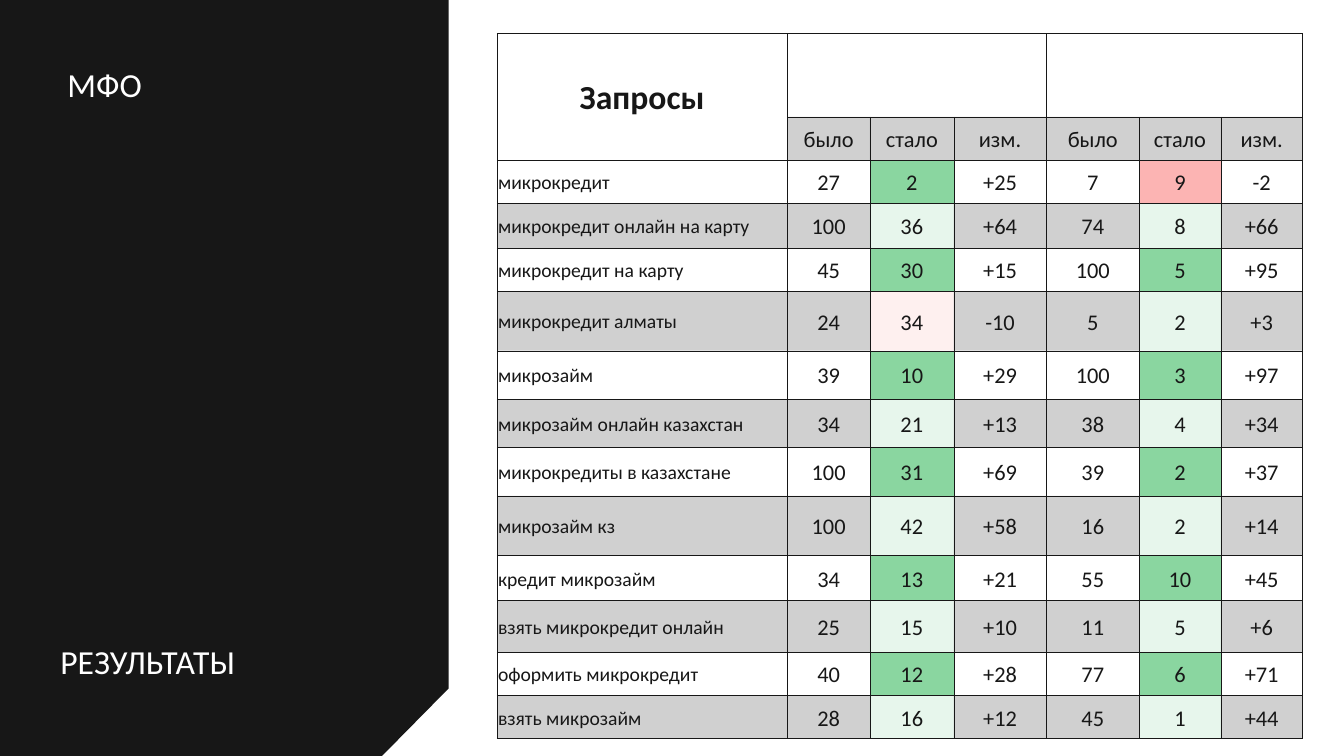
from lxml.etree import SubElement
from pptx import Presentation
from pptx.dml.color import RGBColor
from pptx.enum.text import MSO_ANCHOR, PP_ALIGN
from pptx.oxml import parse_xml
from pptx.oxml.ns import nsdecls, qn
from pptx.util import Inches, Pt

INK = RGBColor(0x17, 0x17, 0x17)
WHITE = RGBColor(0xFF, 0xFF, 0xFF)
GREEN = RGBColor(0x8A, 0xD6, 0xA0)
RED = RGBColor(0xFC, 0xB4, 0xB3)
FONT = "Calibri"

SLIDE_WIDTH = Inches(13.33)
SLIDE_HEIGHT = Inches(7.5)
GRID = 100

COLUMN_WIDTHS = [21.6, 6.15, 6.23, 6.9, 6.9, 6.08, 6.08]
ROW_HEIGHTS = [11.07, 5.73, 5.73, 5.87, 5.73, 7.87, 6.4, 6.4, 6.4, 7.87, 6, 6.8, 5.73, 5.73]
HEADINGS = ["было", "стало", "изм."]
QUERIES = [
    ("микрокредит", (27, 2), (7, 9)),
    ("микрокредит онлайн на карту", (100, 36), (74, 8)),
    ("микрокредит на карту", (45, 30), (100, 5)),
    ("микрокредит алматы", (24, 34), (5, 2)),
    ("микрозайм", (39, 10), (100, 3)),
    ("микрозайм онлайн казахстан", (34, 21), (38, 4)),
    ("микрокредиты в казахстане", (100, 31), (39, 2)),
    ("микрозайм кз", (100, 42), (16, 2)),
    ("кредит микрозайм", (34, 13), (55, 10)),
    ("взять микрокредит онлайн", (25, 15), (11, 5)),
    ("оформить микрокредит", (40, 12), (77, 6)),
    ("взять микрозайм", (28, 16), (45, 1)),
]

HEADER_MARGINS = {"margin_left": Inches(0.07), "margin_right": Inches(0.07),
                  "margin_top": 0, "margin_bottom": 0}
BODY_MARGINS = {"margin_left": Inches(0.01), "margin_right": Inches(0.01),
                "margin_top": Inches(0.01), "margin_bottom": 0}
CELL_PARAGRAPH = {"line_spacing": 1.07, "space_after": Pt(8)}


def across(columns):
    return round(SLIDE_WIDTH * columns / GRID)


def down(rows):
    return round(SLIDE_HEIGHT * rows / GRID)


def set_format(target, values):
    for name, value in values.items():
        setattr(target, name, value)


def write_text(paragraph, text, size, color, paragraph_format, bold=False):
    set_format(paragraph, paragraph_format)
    run = paragraph.add_run()
    run.text = text
    set_format(run.font, {"name": FONT, "size": Pt(size), "bold": bold})
    run.font.color.rgb = color


def add_panel(slide):
    outline = [(28.43, 100), (33.38, 91.07), (33.38, 0), (0, 0)]
    builder = slide.shapes.build_freeform(0, down(100))
    builder.add_line_segments([(across(x), down(y)) for x, y in outline], close=True)
    shape = builder.convert_to_shape()
    shape.shadow.inherit = False
    shape.fill.solid()
    shape.fill.fore_color.rgb = INK
    shape.line.fill.background()


def add_label(slide, text, left, top, width, height):
    shape = slide.shapes.add_textbox(across(left), down(top), across(width), down(height))
    shape.text_frame.word_wrap = True
    write_text(shape.text_frame.paragraphs[0], text, 24, WHITE, {"line_spacing": 0.9})


def fill_cell(cell, color, opacity=100):
    cell.fill.solid()
    cell.fill.fore_color.rgb = color
    if opacity < 100:
        color_element = cell.fill._xPr.find(qn("a:solidFill"))[0]
        SubElement(color_element, qn("a:alpha")).set("val", str(opacity * 1000))


def add_borders(cell):
    properties = cell._tc.get_or_add_tcPr()
    for position, side in enumerate(["lnL", "lnR", "lnT", "lnB"]):
        properties.insert(position, parse_xml(
            f'<a:{side} {nsdecls("a")} w="{Pt(0.25)}"><a:solidFill>'
            f'<a:srgbClr val="{INK}"/></a:solidFill></a:{side}>'))


def write_cell(cell, text, size, align=PP_ALIGN.CENTER, bold=False):
    write_text(cell.text_frame.paragraphs[0], text, size, INK,
               {**CELL_PARAGRAPH, "alignment": align}, bold)


def add_empty_table(slide):
    table = slide.shapes.add_table(
        len(ROW_HEIGHTS), len(COLUMN_WIDTHS), across(36.98), down(4.4),
        across(sum(COLUMN_WIDTHS)), down(sum(ROW_HEIGHTS))).table
    set_format(table, {"first_row": False, "horz_banding": False})
    for column, width in zip(table.columns, COLUMN_WIDTHS):
        column.width = across(width)
    for index, (row, height) in enumerate(zip(table.rows, ROW_HEIGHTS)):
        row.height = down(height)
        margins = HEADER_MARGINS if index < 2 else BODY_MARGINS
        for column, cell in enumerate(row.cells):
            set_format(cell, {**margins, "vertical_anchor": MSO_ANCHOR.MIDDLE})
            if index % 2 and (index, column) != (1, 0):
                fill_cell(cell, INK, 20)
            else:
                cell.fill.background()
            add_borders(cell)
    return table


def add_header(table):
    table.cell(0, 0).merge(table.cell(1, 0))
    write_cell(table.cell(0, 0), "Запросы", 24, bold=True)
    for first in (1, 4):
        table.cell(0, first).merge(table.cell(0, first + 2))
        for offset, heading in enumerate(HEADINGS):
            write_cell(table.cell(1, first + offset), heading, 16)


def add_query(table, row, query, *positions):
    write_cell(table.cell(row, 0), query, 14, PP_ALIGN.LEFT)
    for first, (before, after) in zip((1, 4), positions):
        change = before - after
        for offset, text in enumerate([str(before), str(after), f"{change:+d}"]):
            write_cell(table.cell(row, first + offset), text, 16)
        fill_cell(table.cell(row, first + 1), GREEN if change > 0 else RED)


def main():
    presentation = Presentation()
    set_format(presentation, {"slide_width": SLIDE_WIDTH, "slide_height": SLIDE_HEIGHT})
    slide = presentation.slides.add_slide(presentation.slide_layouts[6])
    add_panel(slide)
    add_label(slide, "МФО", 4.28, 8.4, 24.98, 18.13)
    table = add_empty_table(slide)
    add_header(table)
    for row, query in enumerate(QUERIES, start=2):
        add_query(table, row, *query)
    add_label(slide, "РЕЗУЛЬТАТЫ", 3.75, 84.67, 30.98, 13.07)
    presentation.save("out.pptx")


if __name__ == "__main__":
    main()
